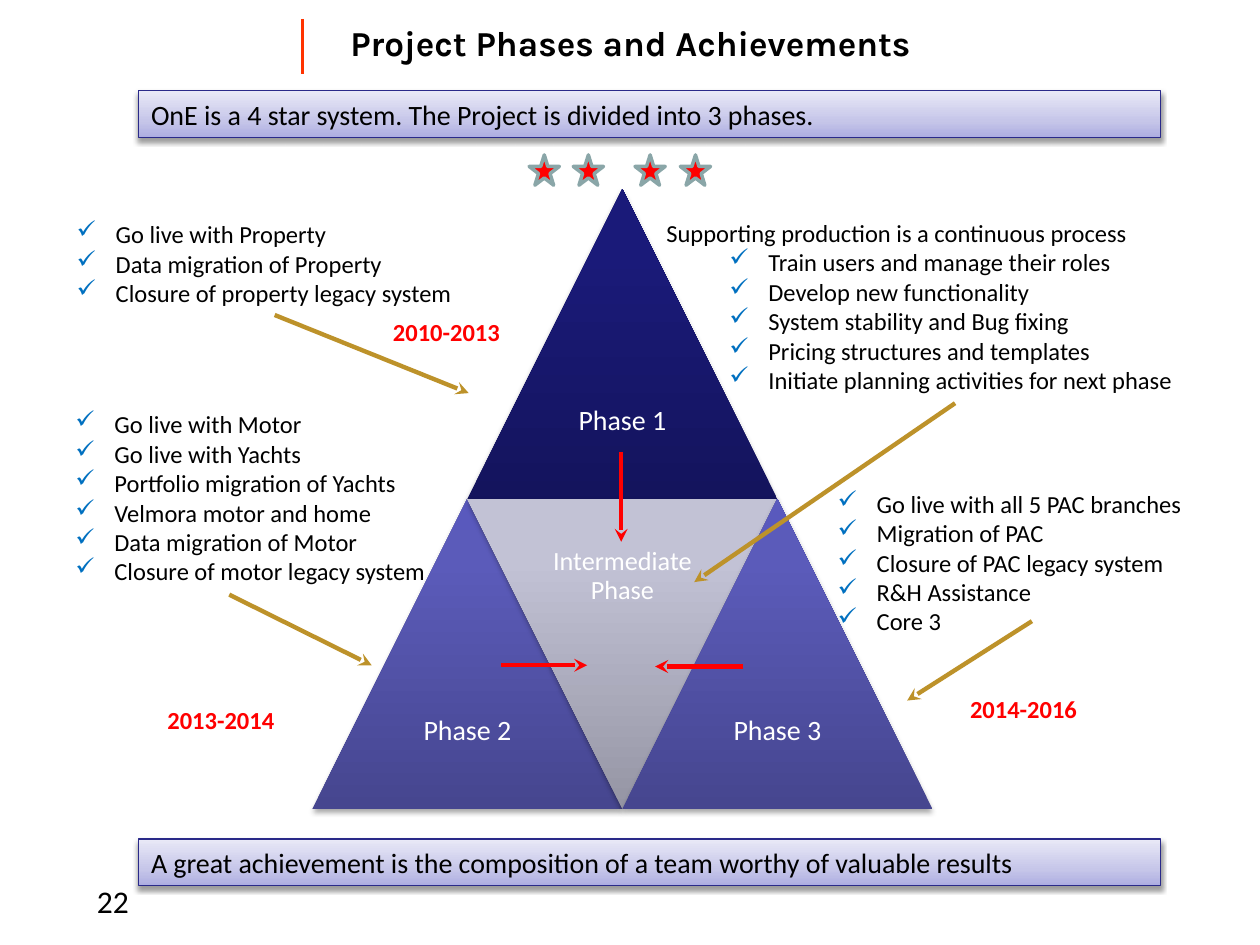
from lxml import etree
from pptx import Presentation
from pptx.dml.color import RGBColor
from pptx.enum.shapes import MSO_CONNECTOR, MSO_SHAPE
from pptx.enum.text import MSO_ANCHOR, MSO_AUTO_SIZE, PP_ALIGN
from pptx.oxml import parse_xml
from pptx.oxml.ns import qn
from pptx.util import Inches, Pt

LINE = MSO_CONNECTOR.STRAIGHT
TRIANGLE, STAR, BAR = (MSO_SHAPE.ISOSCELES_TRIANGLE, MSO_SHAPE.STAR_5_POINT,
                       MSO_SHAPE.RECTANGLE)
LEFT, CENTER, MIDDLE = PP_ALIGN.LEFT, PP_ALIGN.CENTER, MSO_ANCHOR.MIDDLE
FIT, NO_FIT = MSO_AUTO_SIZE.SHAPE_TO_FIT_TEXT, MSO_AUTO_SIZE.NONE
NAMESPACE = "http://schemas.openxmlformats.org/drawingml/2006/main"
BLACK, WHITE, RED, GOLD, BLUE = "000000", "FFFFFF", "FF0000", "BD922A", "0070C0"

# Content
TITLE = "Project Phases and Achievements"
PAGE_NUMBER = "22"
BANNERS = [
    (0.72, "OnE is a 4 star system. The Project is divided into 3 phases."),
    (6.66, "A great achievement is the composition of a team worthy of valuable results"),
]
BANNER_STOPS = [(0, "ADADE1"), (35, "C6C6E9"), (100, "E9E9F7")]
NAVY_STOPS = [(0, "14145D"), (80, "1A1A79"), (100, "18187B")]
VIOLET_STOPS = [(0, "46468F"), (80, "5B5BBA"), (100, "5959BD")]
GREY_STOPS = [(0, "9595A4"), (80, "C2C2D5"), (100, "C2C2D7")]
# Label, column in half sides, row, stops, points down, text size
PHASES = [
    ("Phase 1", 1, 0, NAVY_STOPS, False, 16),
    ("Phase 2", 0, 1, VIOLET_STOPS, False, 16),
    ("Intermediate Phase", 1, 1, GREY_STOPS, True, 15),
    ("Phase 3", 2, 1, VIOLET_STOPS, False, 16),
]
# Left, top, width, height, heading, bullet items
LISTS = [
    (0.51, 1.69, 3.21, 0.81, None, [
        "Go live with Property", "Data migration of Property",
        "Closure of property legacy system"]),
    (0.5, 3.2, 3, 1.51, None, [
        "Go live with Motor", "Go live with Yachts", "Portfolio migration of Yachts",
        "Velmora motor and home", "Data migration of Motor",
        "Closure of motor legacy system"]),
    (6.55, 3.83, 2.96, 1.28, None, [
        "Go live with all 5 PAC branches", "Migration of PAC",
        "Closure of PAC legacy system", "R&H Assistance", "Core 3"]),
    (5.19, 1.68, 4.27, 1.51, "Supporting production is a continuous process", [
        "Train users and manage their roles", "Develop new functionality",
        "System stability and Bug fixing", "Pricing structures and templates",
        "Initiate planning activities for next phase"]),
]
YEARS = [(3.02, 2.47, "2010-2013"), (1.23, 5.55, "2013-2014"), (7.6, 5.46, "2014-2016")]
ARROWS = [
    (GOLD, (2.18, 2.5, 3.72, 3.12)), (GOLD, (1.82, 4.72, 2.95, 5.28)),
    (GOLD, (8.19, 4.93, 7.2, 5.56)), (GOLD, (7.58, 3.2, 5.51, 4.62)),
    (RED, (5.9, 5.29, 5.2, 5.29)), (RED, (3.98, 5.28, 4.66, 5.28)),
    (RED, (4.93, 3.59, 4.93, 4.3)),
]
STAR_LEFTS = [4.2, 4.55, 5.04, 5.4]
SIDE, PYRAMID_LEFT, PYRAMID_TOP = 2.46, 2.48, 1.5


def color(value):
    return RGBColor.from_string(value)


def inches(*values):
    return [Inches(value) for value in values]


def style(paragraph, size, ink=BLACK, bold=False, face="Calibri"):
    for span in paragraph.runs:
        span.font.name, span.font.size, span.font.bold = face, Pt(size), bold
        span.font.color.rgb = color(ink)


def add_label(shapes, place, text, size, ink=BLACK, bold=False):
    box = shapes.add_textbox(*inches(*place))
    frame = box.text_frame
    frame.word_wrap = True
    frame.text = text
    style(frame.paragraphs[0], size, ink, bold)
    return frame


def add_shape(shapes, kind, place):
    shape = shapes.add_shape(kind, *inches(*place))
    shape.shadow.inherit = False
    return shape


def shade(shape, stops, shadow_alpha):
    """Fill upwards with a gradient and cast a soft shadow downwards."""
    shape.fill.background()
    empty = shape._element.spPr.find(qn("a:noFill"))
    marks = "".join(f'<a:gs pos="{place * 1000}"><a:srgbClr val="{value}"/></a:gs>'
                    for place, value in stops)
    empty.getparent().replace(empty, parse_xml(
        f'<a:gradFill xmlns:a="{NAMESPACE}" rotWithShape="0"><a:gsLst>{marks}</a:gsLst>'
        '<a:lin ang="16200000" scaled="0"/></a:gradFill>'))
    shape._element.spPr.find(qn("a:effectLst")).append(parse_xml(
        f'<a:outerShdw xmlns:a="{NAMESPACE}" blurRad="{Pt(3.1)}" dist="{Pt(1.8)}" '
        'dir="5400000" rotWithShape="0"><a:srgbClr val="000000">'
        f'<a:alpha val="{shadow_alpha * 1000}"/></a:srgbClr></a:outerShdw>'))


def add_line(shapes, ends, ink, width, arrow=True):
    line = shapes.add_connector(LINE, *inches(*ends))
    line.line.color.rgb = color(ink)
    line.line.width = Pt(width)
    if arrow:
        etree.SubElement(line.line._get_or_add_ln(), qn("a:tailEnd"), type="stealth")
    etree.SubElement(line._element.spPr, qn("a:effectLst"))


def add_check(paragraph, margin):
    properties = paragraph._p.get_or_add_pPr()
    properties.set("marL", str(Inches(margin)))
    properties.set("indent", str(Inches(-0.31)))
    tint = etree.SubElement(properties, qn("a:buClr"))
    etree.SubElement(tint, qn("a:srgbClr"), val=BLUE)
    etree.SubElement(properties, qn("a:buChar"), char="✓")


def add_list(shapes, place, heading, items):
    frame = shapes.add_textbox(*inches(*place)).text_frame
    frame.word_wrap = False
    frame.auto_size = FIT
    lines = [heading] + items if heading else items
    frame.text = "\n".join(lines)
    for paragraph in frame.paragraphs:
        if paragraph.text != heading:
            paragraph.level = 1 if heading else 0
            add_check(paragraph, 0.81 if heading else 0.31)
        style(paragraph, 14)


def add_banner(shapes, top, text):
    banner = add_shape(shapes, BAR, (1.1, top, 8.11, 0.37))
    shade(banner, BANNER_STOPS, 38)
    banner.line.color.rgb = color("2A2A89")
    banner.line.width = Pt(0.75)
    frame = banner.text_frame
    frame.text = text
    frame.vertical_anchor = MIDDLE
    frame.paragraphs[0].alignment = LEFT
    style(frame.paragraphs[0], 16)


def add_phase(shapes, text, column, row, stops, points_down, size):
    half = SIDE / 2
    left, top = PYRAMID_LEFT + column * half, PYRAMID_TOP + row * SIDE
    triangle = add_shape(shapes, TRIANGLE, (left, top, SIDE, SIDE))
    shade(triangle, stops, 35)
    triangle.line.fill.background()
    triangle.rotation = 180 if points_down else 0
    label_top = top if points_down else top + half
    frame = add_label(shapes, (left + half / 2, label_top, half, half), text, size, WHITE)
    frame.margin_left = frame.margin_right = Inches(0.06)
    frame.margin_top = frame.margin_bottom = Inches(0.06)
    frame.vertical_anchor = MIDDLE
    frame.paragraphs[0].alignment = CENTER
    frame.paragraphs[0].line_spacing = 0.9


def main():
    deck = Presentation()
    deck.slide_width, deck.slide_height = inches(10, 7.5)
    page = deck.slides.add_slide(deck.slide_layouts[5])
    shapes = page.shapes

    # Title and its accent line
    title = shapes.title
    title.left, title.top, title.width, title.height = inches(2.68, 0.13, 6.1, 0.41)
    title.text_frame.text = TITLE
    title.text_frame.auto_size = NO_FIT
    title.text_frame.vertical_anchor = MIDDLE
    title.text_frame.paragraphs[0].alignment = LEFT
    style(title.text_frame.paragraphs[0], 20, bold=True, face="Karla")
    add_line(shapes, (2.4, 0.15, 2.4, 0.59), "FF3300", 1.5, arrow=False)

    # Pyramid of phases
    pyramid = shapes.add_group_shape()
    for phase in PHASES:
        add_phase(pyramid.shapes, *phase)

    # Banners, lists and arrows
    for top, text in BANNERS:
        add_banner(shapes, top, text)
    for *place, heading, items in LISTS:
        add_list(shapes, place, heading, items)
    for ink, ends in ARROWS:
        add_line(shapes, ends, ink, 2.5)

    # Stars
    for left in STAR_LEFTS:
        star = add_shape(shapes, STAR, (left, 1.23, 0.24, 0.24))
        star.fill.solid()
        star.fill.fore_color.rgb = color(RED)
        star.line.color.rgb = color("8AA6A8")
        star.line.width = Pt(2)

    # Page number and years
    add_label(shapes, (0.67, 6.95, 0.71, 0.4), PAGE_NUMBER, 18)
    for left, top, years in YEARS:
        add_label(shapes, (left, top, 1.18, 0.34), years, 14, RED, True)

    deck.save("out.pptx")


if __name__ == "__main__":
    main()
